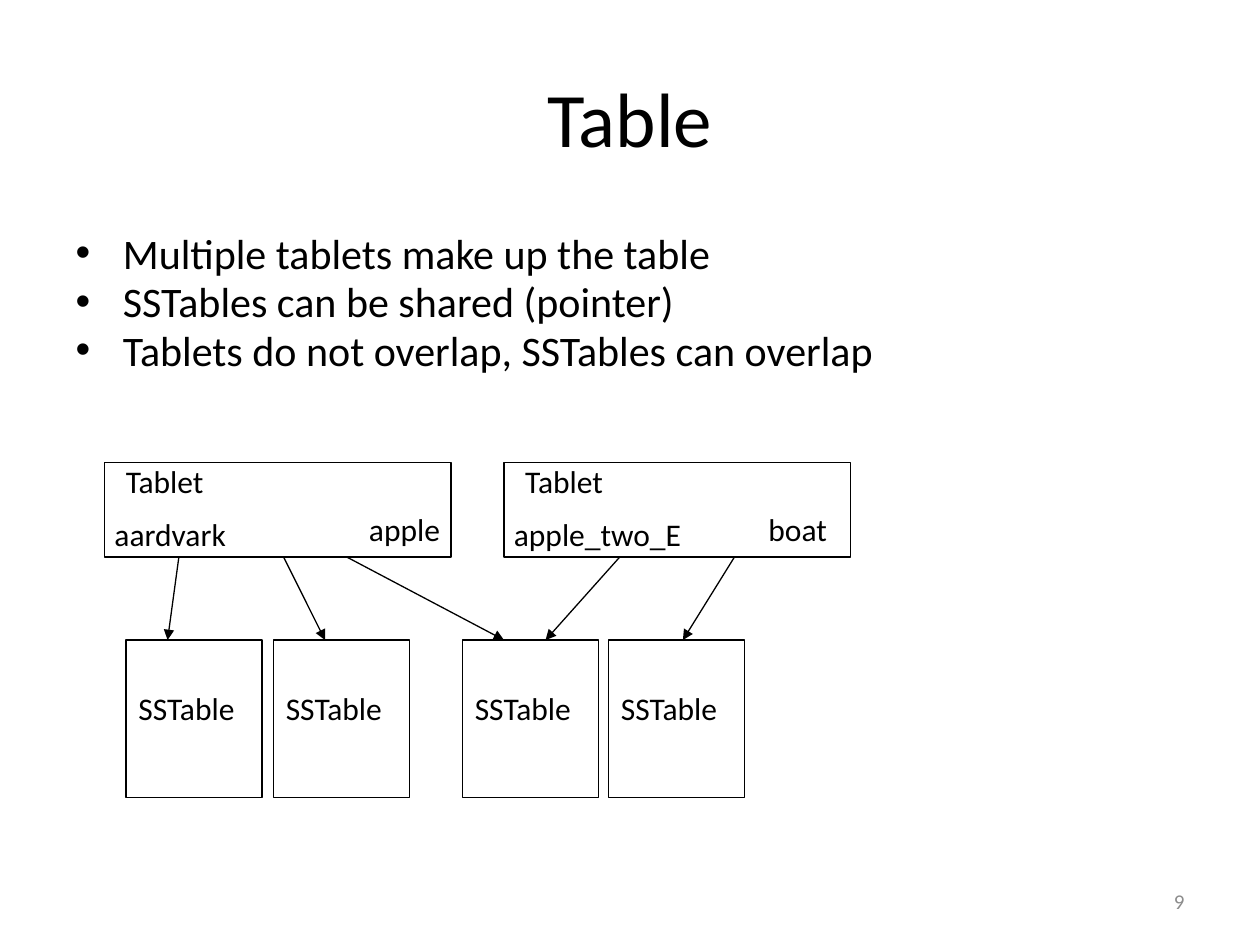
import lxml.etree
import pptx
import pptx.dml.color
import pptx.enum.shapes
import pptx.enum.text
import pptx.oxml.ns
import pptx.util

Inches = pptx.util.Inches
ALIGN = pptx.enum.text.PP_ALIGN
ANCHOR = pptx.enum.text.MSO_ANCHOR
BLACK = "000000"
GREY = "8C8C8C"
TABLET_SIZE = (2.75, 0.75)
SSTABLE_SIZE = (1.08, 1.25)
TABLET_TOP = 3.67
SSTABLE_TOP = 5.08


def color(hex_value):
    return pptx.dml.color.RGBColor.from_string(hex_value)


def write_text(frame, text, size=18, fill=BLACK, align=ALIGN.LEFT,
               anchor=ANCHOR.TOP, line_spacing=None):
    frame.word_wrap = True
    frame.auto_size = pptx.enum.text.MSO_AUTO_SIZE.NONE
    frame.vertical_anchor = anchor
    frame.text = text
    for paragraph in frame.paragraphs:
        paragraph.alignment = align
        paragraph.line_spacing = line_spacing
        for run in paragraph.runs:
            run.font.name = "Calibri"
            run.font.size = pptx.util.Pt(size)
            run.font.color.rgb = color(fill)


def place(placeholder, left, top, width, height):
    placeholder.left, placeholder.top = Inches(left), Inches(top)
    placeholder.width, placeholder.height = Inches(width), Inches(height)


def add_label(slide, text, left, top, width, height=0.4, **text_format):
    label = slide.shapes.add_textbox(
        Inches(left), Inches(top), Inches(width), Inches(height))
    write_text(label.text_frame, text, **text_format)


def add_outline(slide, left, top, width, height):
    outline = slide.shapes.add_shape(
        pptx.enum.shapes.MSO_SHAPE.RECTANGLE,
        Inches(left), Inches(top), Inches(width), Inches(height))
    outline.shadow.inherit = False
    outline.fill.background()
    outline.line.color.rgb = color(BLACK)
    outline.line.width = pptx.util.Pt(0.75)


def add_sstable(slide, left, top):
    add_outline(slide, left, top, *SSTABLE_SIZE)
    add_label(slide, "SSTable", left, top + 0.34, 1.16)


def add_tablet(slide, left, top, first_key, last_key, last_key_offset):
    add_outline(slide, left, top, *TABLET_SIZE)
    add_label(slide, "Tablet", left + 0.07, top - 0.05, 0.9)
    add_label(slide, first_key, left - 0.02, top + 0.37, 1.65)
    add_label(slide, last_key, left + last_key_offset, top + 0.33, 0.81)


def add_pointer(slide, start_x, start_y, end_x, end_y):
    pointer = slide.shapes.add_connector(
        pptx.enum.shapes.MSO_CONNECTOR.STRAIGHT,
        Inches(start_x), Inches(start_y), Inches(end_x), Inches(end_y))
    pointer.line.color.rgb = color(BLACK)
    pointer.line.width = pptx.util.Pt(0.75)
    qn = pptx.oxml.ns.qn
    outline = pointer.line._get_or_add_ln()
    lxml.etree.SubElement(outline, qn("a:tailEnd"), type="triangle")
    lxml.etree.SubElement(pointer._element.spPr, qn("a:effectLst"))


def add_heading(slide):
    title = slide.shapes.title
    place(title, 0.5, 0.3, 9, 1.25)
    write_text(title.text_frame, "Table", size=44, align=ALIGN.CENTER,
               anchor=ANCHOR.MIDDLE)


def add_points(slide):
    points = slide.placeholders[1]
    place(points, 0.5, 1.83, 9.17, 1.33)
    write_text(points.text_frame, "\n".join([
        "Multiple tablets make up the table",
        "SSTables can be shared (pointer)",
        "Tablets do not overlap, SSTables can overlap",
    ]), size=24, line_spacing=0.8)


def add_diagram(slide):
    for left in (1, 2.17, 3.67, 4.83):
        add_sstable(slide, left, SSTABLE_TOP)
    add_tablet(slide, 0.83, TABLET_TOP, "aardvark", "apple", 2)
    add_tablet(slide, 4, TABLET_TOP, "apple_two_E", "boat", 2)
    pointer_ends = [(1.42, 1.33), (2.25, 2.58), (2.75, 4),
                    (4.92, 4.33), (5.83, 5.42)]
    for start_x, end_x in pointer_ends:
        add_pointer(slide, start_x, TABLET_TOP + TABLET_SIZE[1],
                    end_x, SSTABLE_TOP)


def main():
    deck = pptx.Presentation()
    deck.slide_width, deck.slide_height = Inches(10), Inches(7.5)
    slide = deck.slides.add_slide(deck.slide_layouts[1])
    add_heading(slide)
    add_points(slide)
    add_diagram(slide)
    add_label(slide, "9", 7.17, 6.95, 2.33, size=12, fill=GREY,
              align=ALIGN.RIGHT, anchor=ANCHOR.MIDDLE)
    deck.save("out.pptx")


if __name__ == "__main__":
    main()
